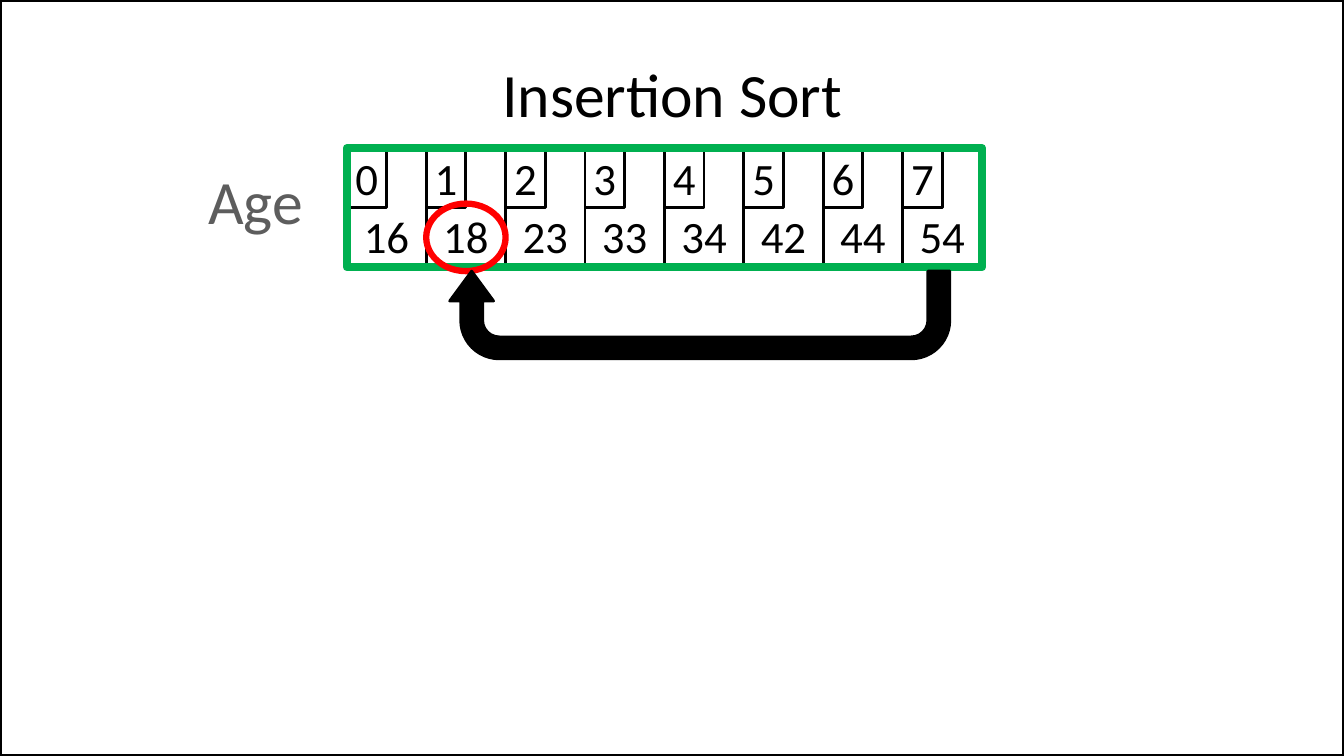
import pptx
import pptx.util
import pptx.dml.color
import pptx.enum.shapes
import pptx.enum.text

Inches = pptx.util.Inches
Shapes = pptx.enum.shapes.MSO_SHAPE
Anchor = pptx.enum.text.MSO_ANCHOR

COLORS = {"ink": "000000", "label": "5D5D5D", "array": "00B050", "focus": "FF0000"}


class SlideBuilder:
    """Holds the slide style and the current page."""

    font = "Calibri"

    def __init__(self, deck):
        self.page = deck.slides.add_slide(deck.slide_layouts[6])

    def color(self, name):
        return pptx.dml.color.RGBColor.from_string(COLORS[name])

    def set_text(self, box, text, size, color="ink", anchor=Anchor.MIDDLE, inset=0, wrap=True):
        frame = box.text_frame
        frame.word_wrap = wrap
        frame.vertical_anchor = anchor
        frame.margin_left = frame.margin_right = 0
        frame.margin_top = frame.margin_bottom = Inches(inset)
        para = frame.paragraphs[0]
        para.text = text
        para.alignment = pptx.enum.text.PP_ALIGN.CENTER
        para.font.name = self.font
        para.font.size = pptx.util.Pt(size)
        para.font.color.rgb = self.color(color)

    def text(self, place, text, size, **style):
        box = self.page.shapes.add_textbox(*map(Inches, place))
        self.set_text(box, text, size, **style)

    def shape(self, kind, place, line="ink", width=2, fill=None):
        shape = self.page.shapes.add_shape(kind, *map(Inches, place))
        shape.shadow.inherit = False
        shape.line.color.rgb = self.color(line)
        shape.line.width = pptx.util.Pt(width)
        if fill:
            shape.fill.solid()
            shape.fill.fore_color.rgb = self.color(fill)
        else:
            shape.fill.background()
        return shape

    def cell(self, place, text, **style):
        self.set_text(self.shape(Shapes.RECTANGLE, place), text, 32, **style)


def main():
    deck = pptx.Presentation()
    deck.slide_width, deck.slide_height = Inches(13.33), Inches(7.5)
    slide = SlideBuilder(deck)

    # Page border and title
    slide.shape(Shapes.RECTANGLE, (0, 0, 13.33, 7.5), width=3)
    slide.text((0.67, 0.3, 12, 1.25), "Insertion Sort", 44, inset=0.05)

    # Array cells, then their index boxes
    ages = [16, 18, 23, 33, 34, 42, 44, 54]
    left, top, width, height = 3.44, 1.47, 6.3, 1.18
    pitch = width / len(ages)
    for index, age in enumerate(ages):
        slide.cell((left + index * pitch, top, pitch, height), str(age),
                   anchor=Anchor.BOTTOM, inset=0.05)
    for index in range(len(ages)):
        slide.cell((left + index * pitch, top, pitch / 2, height / 2), str(index))

    # Array label and outline
    slide.text((1.95, 1.57, 1.17, 0.84), "Age", 44, color="label",
               anchor=Anchor.TOP, inset=0.05, wrap=False)
    slide.shape(Shapes.RECTANGLE, (left, top, width, height), line="array", width=6)

    # Inserted value and the move that placed it
    slide.shape(Shapes.OVAL, (left + pitch, 2.02, pitch, 0.67), line="focus", width=4.5)
    move = slide.shape(Shapes.U_TURN_ARROW, (4.46, 2.69, 4.96, 0.87), fill="ink")
    move.rotation = 180
    for position, value in enumerate((0.25, 0.25, 0.34, 0.44, 1)):
        move.adjustments[position] = value

    deck.save("out.pptx")


if __name__ == "__main__":
    main()
